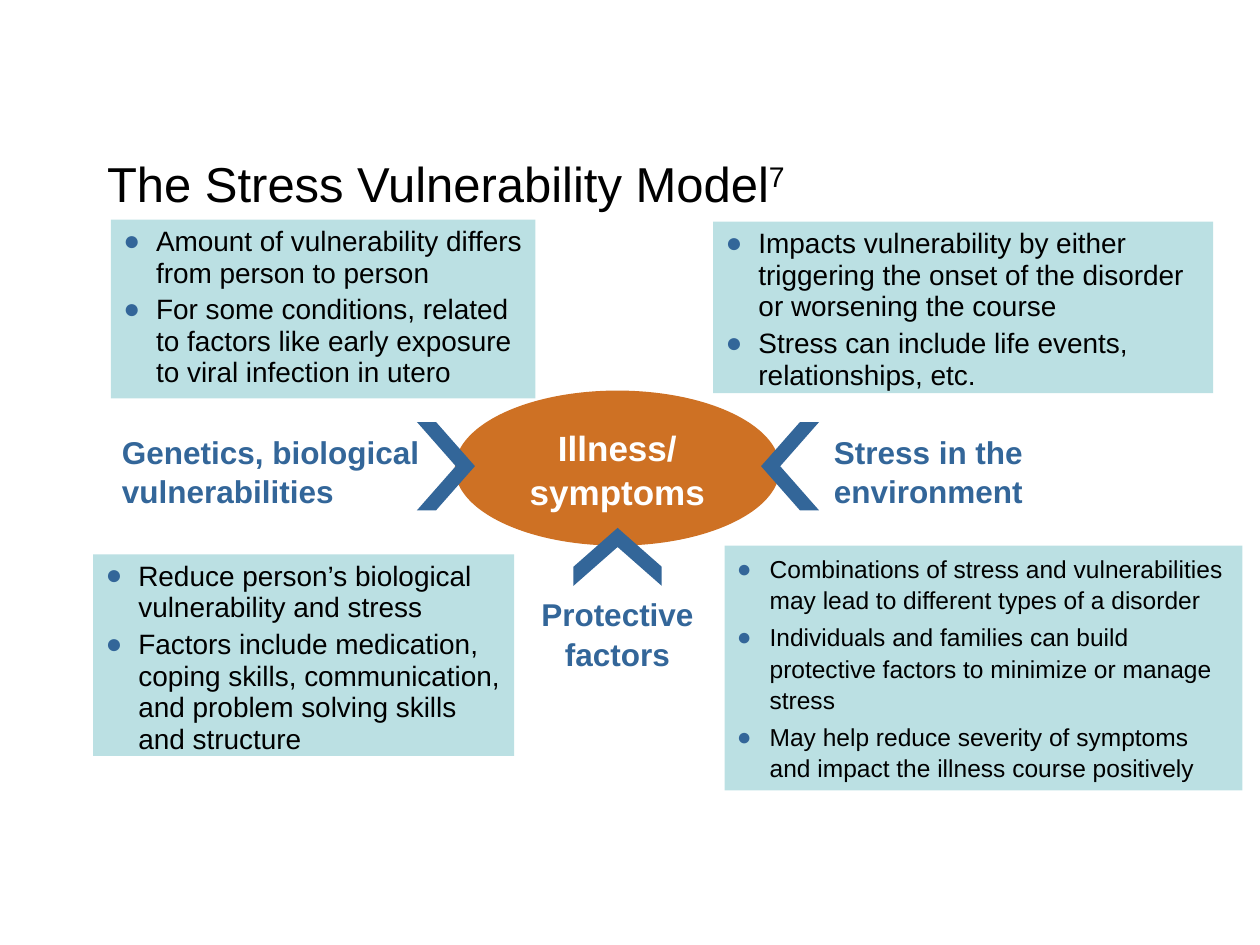
from dataclasses import dataclass

from lxml.etree import SubElement
from pptx import Presentation
from pptx.dml.color import RGBColor
from pptx.enum.shapes import MSO_SHAPE
from pptx.enum.text import MSO_ANCHOR, MSO_AUTO_SIZE, PP_ALIGN
from pptx.oxml.ns import qn
from pptx.util import Pt


@dataclass(frozen=True)
class Theme:
    font: str = "Arial"
    black: RGBColor = RGBColor(0x00, 0x00, 0x00)
    white: RGBColor = RGBColor(0xFF, 0xFF, 0xFF)
    blue: RGBColor = RGBColor(0x33, 0x66, 0x99)
    pale: RGBColor = RGBColor(0xBB, 0xE0, 0xE3)
    orange: RGBColor = RGBColor(0xCE, 0x71, 0x24)
    title_size: float = 28
    center_size: float = 20
    label_size: float = 18
    list_size: float = 16
    small_list_size: float = 14


THEME = Theme()


@dataclass(frozen=True)
class Box:
    """Left, top, width and height in points."""
    left: float
    top: float
    width: float
    height: float

    def lengths(self) -> tuple:
        return Pt(self.left), Pt(self.top), Pt(self.width), Pt(self.height)


@dataclass(frozen=True)
class Panel:
    box: Box
    items: tuple
    size: float = THEME.list_size


@dataclass(frozen=True)
class Label:
    box: Box
    text: str
    alignment: PP_ALIGN = PP_ALIGN.LEFT


@dataclass(frozen=True)
class Chevron:
    left: float
    top: float
    rotation: float


STRESS_PANEL = Panel(Box(407.5, 126.7, 285.8, 97.9), (
    "Impacts vulnerability by either triggering the onset of the disorder "
    "or worsening the course",
    "Stress can include life events, relationships, etc.",
))
PANELS = (
    Panel(Box(63.4, 125.5, 242.6, 102.2), (
        "Amount of vulnerability differs from person to person",
        "For some conditions, related to factors like early exposure to "
        "viral infection in utero",
    )),
    Panel(Box(53.3, 316.8, 240.5, 115.2), (
        "Reduce person’s biological vulnerability and stress",
        "Factors include medication, coping skills, communication, and "
        "problem solving skills and structure",
    )),
    Panel(Box(414, 311.8, 295.9, 139.9), (
        "Combinations of stress and vulnerabilities may lead to different "
        "types of a disorder",
        "Individuals and families can build protective factors to minimize "
        "or manage stress",
        "May help reduce severity of symptoms and impact the illness course "
        "positively",
    ), THEME.small_list_size),
)
LABELS = (
    Label(Box(62.6, 242.6, 188.6, 51.1), "Genetics, biological vulnerabilities"),
    Label(Box(469.4, 242.6, 185, 51.1), "Stress in the environment"),
    Label(Box(293.8, 335.5, 118.1, 51.1), "Protective factors", PP_ALIGN.CENTER),
)
CHEVRONS = (
    Chevron(238.3, 241.2, 0),
    Chevron(434.9, 241.2, 180),
    Chevron(336.4, 293, 270),
)


def place(shape, box: Box) -> None:
    shape.left, shape.top, shape.width, shape.height = box.lengths()


def add_run(paragraph, text: str, size: float, color: RGBColor, bold: bool = False):
    run = paragraph.add_run()
    run.text = text
    font = run.font
    font.name, font.size, font.bold = THEME.font, Pt(size), bold
    font.color.rgb = color
    return run


def paint(shape, color: RGBColor) -> None:
    shape.fill.solid()
    shape.fill.fore_color.rgb = color
    shape.line.fill.background()


def add_plain_shape(slide, kind: MSO_SHAPE, box: Box, color: RGBColor):
    shape = slide.shapes.add_shape(kind, *box.lengths())
    shape.shadow.inherit = False
    paint(shape, color)
    return shape


def add_bullet(paragraph) -> None:
    properties = paragraph._p.get_or_add_pPr()
    properties.set("marL", str(Pt(18.72)))
    properties.set("indent", str(-Pt(18.72)))
    color = SubElement(properties, qn("a:buClr"))
    SubElement(color, qn("a:srgbClr")).set("val", str(THEME.blue))
    SubElement(properties, qn("a:buFont")).set("typeface", THEME.font)
    SubElement(properties, qn("a:buChar")).set("char", "●")


def fill_list(shape, panel: Panel) -> None:
    frame = shape.text_frame
    frame.word_wrap = True
    frame.auto_size = MSO_AUTO_SIZE.NONE
    frame.vertical_anchor = MSO_ANCHOR.TOP
    for index, item in enumerate(panel.items):
        paragraph = frame.add_paragraph() if index else frame.paragraphs[0]
        add_bullet(paragraph)
        paragraph.alignment = PP_ALIGN.LEFT
        paragraph.line_spacing = Pt(18)
        paragraph.space_before = Pt(3 if index else 0)
        add_run(paragraph, item, panel.size, THEME.black)


def add_label(slide, label: Label) -> None:
    frame = slide.shapes.add_textbox(*label.box.lengths()).text_frame
    frame.word_wrap = True
    paragraph = frame.paragraphs[0]
    paragraph.alignment = label.alignment
    paragraph.line_spacing = 1.05
    add_run(paragraph, label.text, THEME.label_size, THEME.blue, bold=True)


def add_chevron(slide, chevron: Chevron) -> None:
    box = Box(chevron.left, chevron.top, 33.1, 50.4)
    shape = add_plain_shape(slide, MSO_SHAPE.CHEVRON, box, THEME.blue)
    shape.adjustments[0] = 0.67
    shape.rotation = chevron.rotation


def fill_title(title) -> None:
    place(title, Box(54, 84.2, 630, 66.2))
    frame = title.text_frame
    frame.auto_size = MSO_AUTO_SIZE.NONE
    frame.vertical_anchor = MSO_ANCHOR.TOP
    paragraph = frame.paragraphs[0]
    paragraph.alignment = PP_ALIGN.LEFT
    add_run(paragraph, "The Stress Vulnerability Model", THEME.title_size, THEME.black)
    note = add_run(paragraph, "7", THEME.title_size, THEME.black)
    note._r.get_or_add_rPr().set("baseline", "30000")


def add_center(slide) -> None:
    box = Box(259.9, 223.2, 185.8, 88.6)
    frame = add_plain_shape(slide, MSO_SHAPE.OVAL, box, THEME.orange).text_frame
    frame.word_wrap = False
    frame.vertical_anchor = MSO_ANCHOR.MIDDLE
    paragraph = frame.paragraphs[0]
    paragraph.alignment = PP_ALIGN.CENTER
    paragraph.line_spacing = 1.05
    add_run(paragraph, "Illness/", THEME.center_size, THEME.white, bold=True)
    paragraph.add_line_break()
    add_run(paragraph, "symptoms", THEME.center_size, THEME.white, bold=True)


def main() -> None:
    presentation = Presentation()
    presentation.slide_width, presentation.slide_height = Pt(720), Pt(540)
    slide = presentation.slides.add_slide(presentation.slide_layouts[1])

    # Title and the stress list use the template's placeholders
    fill_title(slide.shapes.title)
    body = slide.placeholders[1]
    place(body, STRESS_PANEL.box)
    paint(body, THEME.pale)
    fill_list(body, STRESS_PANEL)

    # Illness in the middle, with the three influences around it
    add_center(slide)
    for label in LABELS:
        add_label(slide, label)
    for panel in PANELS:
        fill_list(add_plain_shape(slide, MSO_SHAPE.RECTANGLE, panel.box, THEME.pale), panel)
    for chevron in CHEVRONS:
        add_chevron(slide, chevron)

    presentation.save("out.pptx")


if __name__ == "__main__":
    main()
